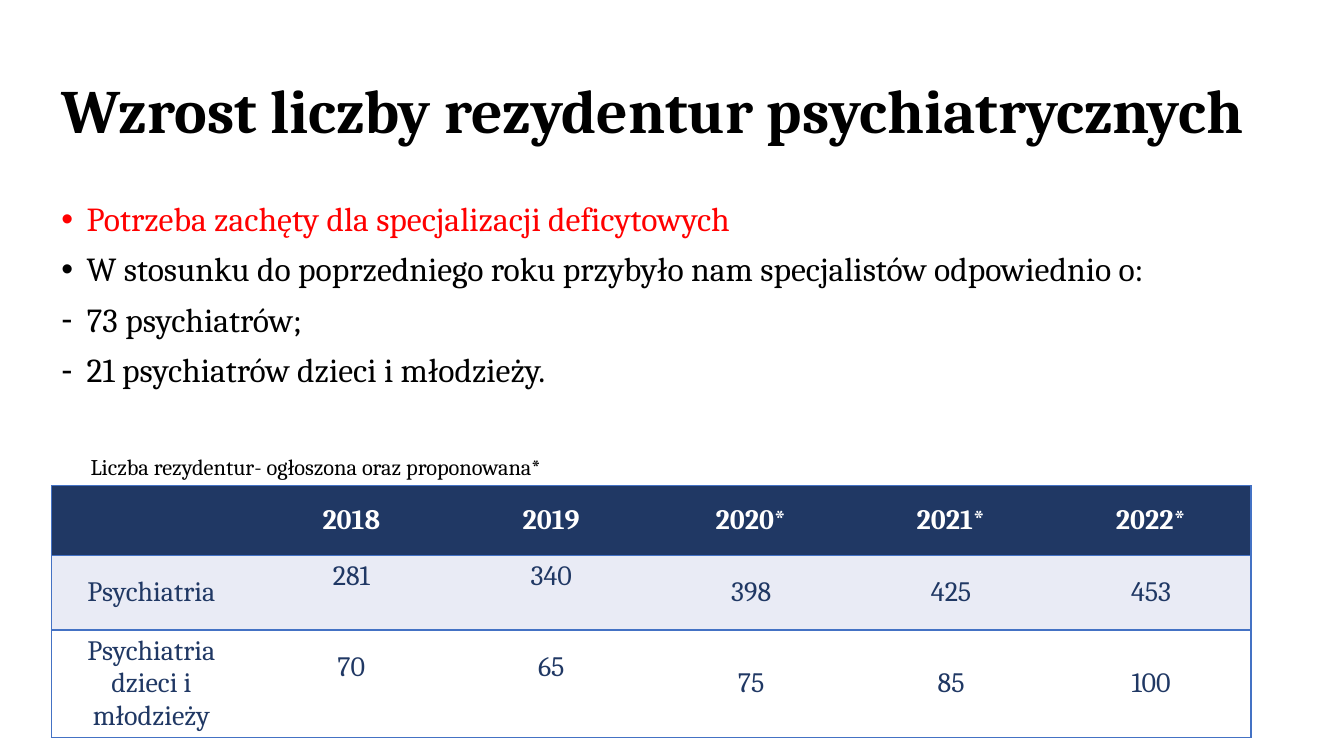
from dataclasses import dataclass

from lxml import etree
from pptx import Presentation
from pptx import util as u
from pptx.dml.color import RGBColor
from pptx.enum import text
from pptx.oxml.ns import qn

PX = 9144


@dataclass(frozen=True)
class Theme:
    """Colours, font and type sizes of the slide."""
    font: str = "Cambria"
    ink: str = "000000"
    alert: str = "FF0000"
    navy: str = "203864"
    pale: str = "E9EBF5"
    white: str = "FFFFFF"
    line: str = "4472C4"
    head: int = 44
    body: int = 24
    cell: int = 20
    note: int = 16


T = Theme()
ITEMS = [
    ("•", "Potrzeba zachęty dla specjalizacji deficytowych", T.alert),
    ("•", "W stosunku do poprzedniego roku przybyło nam specjalistów odpowiednio o:", T.ink),
    ("-", "73 psychiatrów;", T.ink),
    ("-", "21 psychiatrów dzieci i młodzieży.", T.ink),
]
ROWS = [
    ["", "2018", "2019", "2020*", "2021*", "2022*"],
    ["Psychiatria", "281", "340", "398", "425", "453"],
    ["Psychiatria dzieci i młodzieży", "70", "65", "75", "85", "100"],
]
TALL = [69, 73, 107]
FILLS = [T.navy, T.pale, T.white]


def apply(item, **vals):
    """Set each given attribute on the item."""
    for key, val in vals.items():
        setattr(item, key, val)


def place(shape, box):
    """Move a shape to a box given in px."""
    sides = ("left", "top", "width", "height")
    apply(shape, **{side: val * PX for side, val in zip(sides, box)})


def write(para, words, size, tint, bold=False, **form):
    """Fill a paragraph with one formatted run."""
    apply(para, **form)
    run = para.add_run()
    run.text = words
    apply(run.font, name=T.font, size=u.Pt(size), bold=bold)
    run.font.color.rgb = RGBColor.from_string(tint)


def mark(para, char):
    """Give a paragraph a hanging bullet."""
    props = para._p.get_or_add_pPr()
    props.set("marL", str(25 * PX))
    props.set("indent", str(-25 * PX))
    etree.SubElement(props, qn("a:buFont"), typeface="Arial")
    etree.SubElement(props, qn("a:buChar"), char=char)


def edge(cell, side, tint):
    """Draw one cell border, or clear it when there is no tint."""
    line = etree.SubElement(cell._tc.get_or_add_tcPr(), qn("a:ln" + side), w=str(u.Pt(1)))
    if tint:
        fill = etree.SubElement(line, qn("a:solidFill"))
        etree.SubElement(fill, qn("a:srgbClr"), val=tint)
    else:
        etree.SubElement(line, qn("a:noFill"))


def title(slide, box):
    """Place the slide title."""
    shape = slide.shapes.title
    place(shape, box)
    frame = shape.text_frame
    apply(frame, vertical_anchor=text.MSO_ANCHOR.MIDDLE, word_wrap=True,
          auto_size=text.MSO_AUTO_SIZE.NONE)
    write(frame.paragraphs[0], "Wzrost liczby rezydentur psychiatrycznych", T.head, T.ink,
          True, alignment=text.PP_ALIGN.LEFT, line_spacing=0.9)


def points(slide, box):
    """Place the bulleted list."""
    shape = slide.placeholders[1]
    place(shape, box)
    frame = shape.text_frame
    apply(frame, word_wrap=True, auto_size=text.MSO_AUTO_SIZE.NONE)
    for i, (char, words, tint) in enumerate(ITEMS):
        para = frame.add_paragraph() if i else frame.paragraphs[0]
        write(para, words, T.body, tint, line_spacing=0.9, space_before=u.Pt(10 if i else 0))
        mark(para, char)


def note(slide, box):
    """Place the caption above the table."""
    shape = slide.shapes.add_textbox(0, 0, 0, 0)
    place(shape, box)
    frame = shape.text_frame
    frame.word_wrap = True
    write(frame.paragraphs[0], "Liczba rezydentur- ogłoszona oraz proponowana*", T.note, T.ink)


def grid(slide, box):
    """Place the table of residencies by year."""
    last = len(ROWS[0]) - 1
    table = slide.shapes.add_table(len(ROWS), last + 1, *(val * PX for val in box)).table
    for r, row in enumerate(ROWS):
        table.rows[r].height = TALL[r] * PX
        for c, words in enumerate(row):
            cell = table.cell(r, c)
            cell.vertical_anchor = text.MSO_ANCHOR.MIDDLE
            if r and c in (1, 2):
                cell.margin_bottom = 37 * PX
            tints = {"L": c == 0, "R": c == last, "T": True, "B": True}
            for side, shown in tints.items():
                edge(cell, side, T.line if shown else None)
            cell.fill.solid()
            cell.fill.fore_color.rgb = RGBColor.from_string(FILLS[r])
            if words:
                write(cell.text_frame.paragraphs[0], words, T.cell, T.navy if r else T.white,
                      r == 0, alignment=text.PP_ALIGN.CENTER)


def main():
    """Build the slide and save it."""
    deck = Presentation()
    apply(deck, slide_width=1333 * PX, slide_height=750 * PX)
    slide = deck.slides.add_slide(deck.slide_layouts[1])
    title(slide, (51, 40, 1266, 145))
    points(slide, (51, 196, 1266, 240))
    grid(slide, (51, 482, 1190, sum(TALL)))
    note(slide, (80, 445, 604, 37))
    deck.save("out.pptx")


if __name__ == "__main__":
    main()
